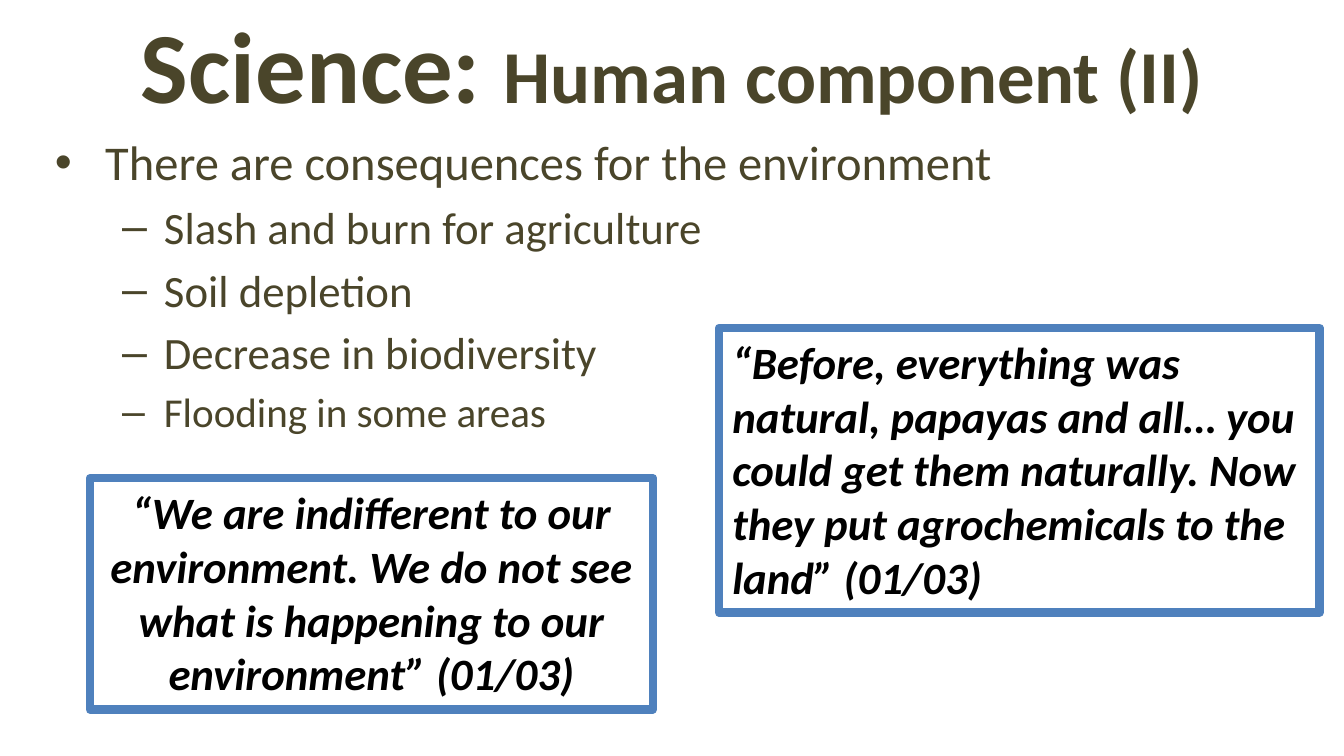
import pptx
import pptx.util
import pptx.dml.color
import pptx.enum.shapes
import pptx.enum.text
import pptx.oxml.ns
from lxml import etree

Cm = pptx.util.Cm
Pt = pptx.util.Pt
RGBColor = pptx.dml.color.RGBColor
ALIGN = pptx.enum.text.PP_ALIGN
ANCHOR = pptx.enum.text.MSO_ANCHOR
qn = pptx.oxml.ns.qn

OLIVE = RGBColor(0x4A, 0x45, 0x2A)
BLUE = RGBColor(0x4F, 0x81, 0xBD)
BLACK = RGBColor(0, 0, 0)
WHITE = RGBColor(0xFF, 0xFF, 0xFF)
FONT = "Calibri"

# (text, size)
TITLE = [("Science: ", 54), ("Human component (II)", 40)]
# (text, level, size)
POINTS = [
    ("There are consequences for the environment", 0, 26),
    ("Slash and burn for agriculture", 1, 24),
    ("Soil depletion", 1, 24),
    ("Decrease in biodiversity", 1, 24),
    ("Flooding in some areas", 1, 22),
]
# level: (bullet, left margin, hanging indent)
BULLETS = {0: ("•", Cm(0.95), Cm(0.95)), 1: ("–", Cm(2.06), Cm(0.79))}
# (text, alignment, (left, top, width, height) in cm)
QUOTES = [
    ("“We are indifferent to our environment. We do not see what is "
     "happening to our environment” (01/03)",
     ALIGN.CENTER, (1.7, 9.04, 10.64, 4.37)),
    ("“Before, everything was natural, papayas and all… you could get them "
     "naturally. Now they put agrochemicals to the land” (01/03)",
     ALIGN.LEFT, (13.59, 6.2, 11.35, 5.38)),
]


def add_run(p, text, size, color, bold=False, italic=False):
    r = p.add_run()
    r.text = text
    font = r.font
    font.name, font.size = FONT, Pt(size)
    font.bold, font.italic = bold, italic
    font.color.rgb = color


def add_text_box(slide, box, anchor):
    tf = slide.shapes.add_textbox(*map(Cm, box)).text_frame
    tf.word_wrap = True
    tf.vertical_anchor = anchor
    return tf


def set_bullet(p, level):
    char, margin, hang = BULLETS[level]
    p.level = level
    pPr = p._p.get_or_add_pPr()
    pPr.set("marL", str(margin))
    pPr.set("indent", str(-hang))
    etree.SubElement(pPr, qn("a:buFont"), typeface="Arial")
    etree.SubElement(pPr, qn("a:buChar"), char=char)


def add_quote(slide, text, align, box):
    sp = slide.shapes.add_shape(
        pptx.enum.shapes.MSO_SHAPE.RECTANGLE, *map(Cm, box))
    sp.shadow.inherit = False
    sp.fill.solid()
    sp.fill.fore_color.rgb = WHITE
    sp.line.color.rgb = BLUE
    sp.line.width = Pt(4.5)
    etree.SubElement(sp.line._get_or_add_ln(), qn("a:round"))
    tf = sp.text_frame
    tf.word_wrap = True
    tf.auto_size = pptx.enum.text.MSO_AUTO_SIZE.SHAPE_TO_FIT_TEXT
    tf.vertical_anchor = ANCHOR.TOP
    p = tf.paragraphs[0]
    p.alignment = align
    add_run(p, text, 24, BLACK, bold=True, italic=True)


prs = pptx.Presentation()
prs.slide_width, prs.slide_height = Cm(25.4), Cm(14.29)
slide = prs.slides.add_slide(prs.slide_layouts[6])

p = add_text_box(slide, (1.27, 0, 22.86, 2.38), ANCHOR.MIDDLE).paragraphs[0]
p.alignment = ALIGN.CENTER
for text, size in TITLE:
    add_run(p, text, size, OLIVE, bold=True)

tf = add_text_box(slide, (0.79, 2.38, 23.77, 10.24), ANCHOR.TOP)
for i, (text, level, size) in enumerate(POINTS):
    p = tf.add_paragraph() if i else tf.paragraphs[0]
    p.space_before = Pt(size * 0.2)
    set_bullet(p, level)
    add_run(p, text, size, OLIVE)

for quote in QUOTES:
    add_quote(slide, *quote)

prs.save("out.pptx")
